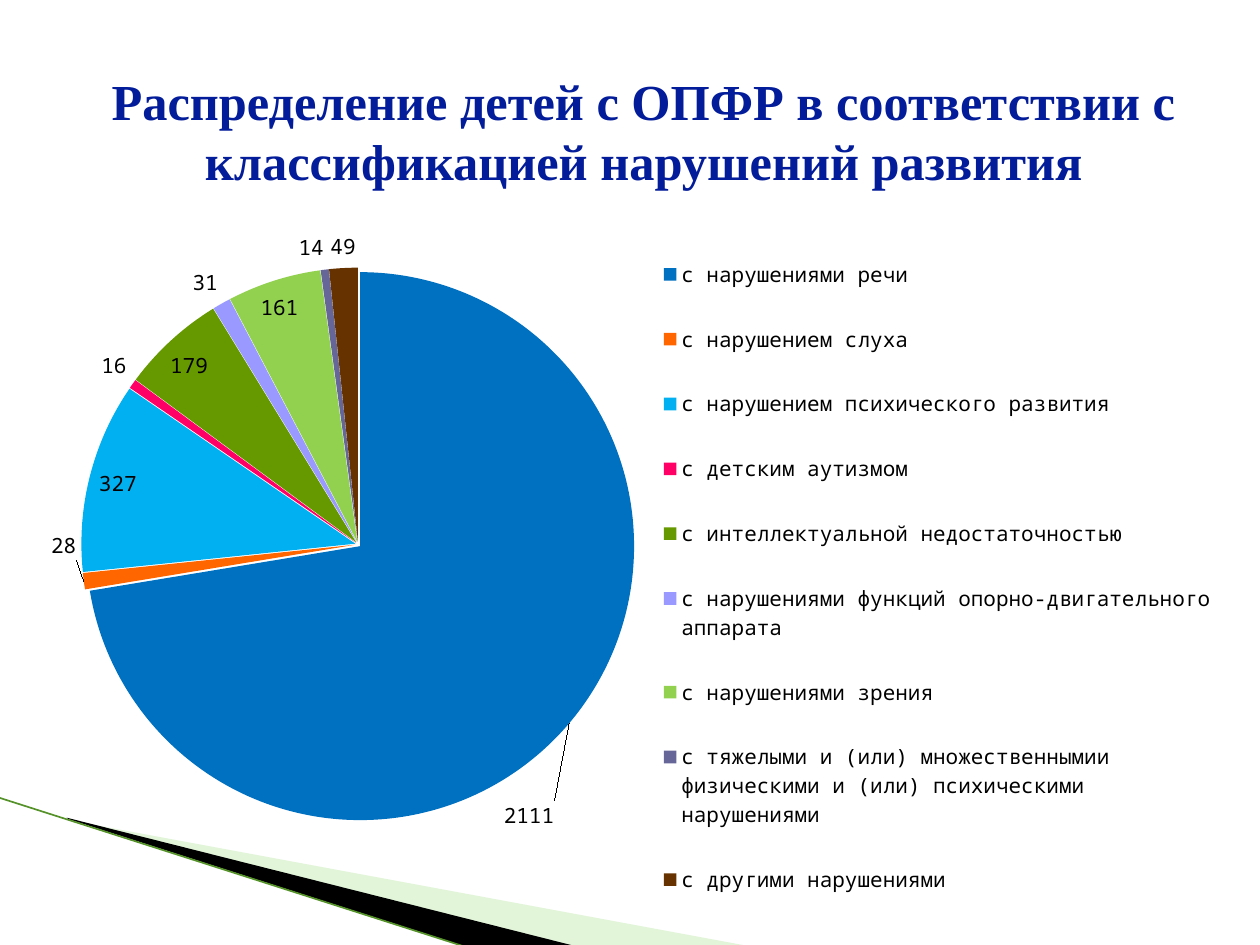
from dataclasses import dataclass

from lxml import etree
from pptx import Presentation
from pptx.chart.data import CategoryChartData
from pptx.dml.color import RGBColor
from pptx.enum.chart import XL_CHART_TYPE, XL_LABEL_POSITION, XL_LEGEND_POSITION
from pptx.enum.shapes import MSO_CONNECTOR
from pptx.enum.text import MSO_ANCHOR, MSO_AUTO_SIZE, PP_ALIGN
from pptx.oxml import parse_xml
from pptx.oxml.ns import nsdecls, qn
from pptx.util import Inches, Pt

PIE = XL_CHART_TYPE.PIE
BEST_FIT = XL_LABEL_POSITION.BEST_FIT
LEGEND_RIGHT = XL_LEGEND_POSITION.RIGHT
STRAIGHT = MSO_CONNECTOR.STRAIGHT
MIDDLE = MSO_ANCHOR.MIDDLE
CENTER = PP_ALIGN.CENTER
TITLE_ONLY = 5


@dataclass(frozen=True)
class Theme:
    title_font: str = "Times New Roman"
    chart_font: str = "Noto Sans Mono"
    title_size: float = 28.8
    chart_size: float = 12
    title: str = "031C99"
    text: str = "000000"
    pale_wedge: str = "B8E7A1"
    dark_wedge: str = "000000"
    edge: str = "55922A"


THEME = Theme()
TITLE = "Распределение детей с ОПФР в соответствии с классификацией нарушений развития"

# Category, number of children, slice colour
SLICES = [
    ("с нарушениями речи", 2111, "0070C0"),
    ("с нарушением слуха", 28, "FF6600"),
    ("с нарушением психического развития", 327, "00B0F0"),
    ("с детским аутизмом", 16, "FF0066"),
    ("с интеллектуальной недостаточностью", 179, "669900"),
    ("с нарушениями функций опорно-двигательного аппарата", 31, "9999FF"),
    ("с нарушениями зрения", 161, "92D050"),
    ("с тяжелыми и (или) множественнымии физическими и (или) психическими нарушениями",
     14, "666699"),
    ("с другими нарушениями", 49, "663300"),
]
# Slice index: shift of its label as a share of the chart
LABEL_SHIFTS = {0: (-0.06, 0.1), 1: (0, -0.07)}


def rgb(value):
    return RGBColor.from_string(value)


def format_font(font, name, size, color, bold=False):
    values = {"name": name, "size": Pt(size), "bold": bold}
    for attribute, value in values.items():
        setattr(font, attribute, value)
    font.color.rgb = rgb(color)


def add_wedge(page, points, color, opacity=100):
    corners = [(Inches(x), Inches(y)) for x, y in points]
    builder = page.shapes.build_freeform(*corners[0], scale=1.0)
    builder.add_line_segments(corners[1:], close=True)
    wedge = builder.convert_to_shape()
    wedge.shadow.inherit = False
    wedge.fill.solid()
    wedge.fill.fore_color.rgb = rgb(color)
    wedge.line.fill.background()
    if opacity < 100:
        fill_color = wedge._element.spPr.find(qn("a:solidFill"))[0]
        etree.SubElement(fill_color, qn("a:alpha"), val=str(opacity * 1000))


def add_edge(page, start, end):
    edge = page.shapes.add_connector(
        STRAIGHT, *(Inches(length) for length in (*start, *end)))
    edge.line.color.rgb = rgb(THEME.edge)
    edge.line.width = Pt(0.95)
    etree.SubElement(edge._element.spPr, qn("a:effectLst"))


def add_title(page):
    title = page.shapes.title
    page.shapes._spTree.append(title._element)
    box = {"left": 0.25, "top": 0.6, "width": 9.72, "height": 0.87}
    for attribute, value in box.items():
        setattr(title, attribute, Inches(value))
    frame = title.text_frame
    frame.word_wrap = True
    frame.auto_size = MSO_AUTO_SIZE.NONE
    frame.vertical_anchor = MIDDLE
    para = frame.paragraphs[0]
    para.alignment = CENTER
    span = para.add_run()
    span.text = TITLE
    format_font(span.font, THEME.title_font, THEME.title_size, THEME.title, True)


def make_layout(**values):
    """Return a chart layout element with the given manual settings."""
    settings = "".join(f'<c:{tag} val="{value}"/>' for tag, value in values.items())
    return parse_xml(f'<c:layout {nsdecls("c")}><c:manualLayout>{settings}'
                     '</c:manualLayout></c:layout>')


def set_layout(parent, layout, after=None):
    for old in parent.findall(qn("c:layout")):
        parent.remove(old)
    if after is None:
        parent.insert(0, layout)
    else:
        parent.find(qn(after)).addnext(layout)


def format_legend(chart):
    chart.has_legend = True
    legend = chart.legend
    legend.position = LEGEND_RIGHT
    legend.include_in_layout = False
    format_font(legend.font, THEME.chart_font, THEME.chart_size, THEME.text)
    set_layout(legend._element, make_layout(
        xMode="edge", yMode="edge", x=0.52, y=0.01, w=0.48, h=0.97), "c:legendPos")


def format_labels(plot):
    plot.has_data_labels = True
    labels = plot.data_labels
    labels.show_value = True
    labels.position = BEST_FIT
    format_font(labels.font, THEME.chart_font, THEME.chart_size, THEME.text)


def format_slices(series):
    explosion = parse_xml(f'<c:explosion {nsdecls("c")} val="1"/>')
    series.format.line.fill.background()
    series._element.find(qn("c:spPr")).addnext(explosion)
    for index, (_, _, color) in enumerate(SLICES):
        fill = series.points[index].format.fill
        fill.solid()
        fill.fore_color.rgb = rgb(color)
    for index, (x, y) in LABEL_SHIFTS.items():
        label = series.points[index].data_label
        format_font(label.font, THEME.chart_font, THEME.chart_size, THEME.text)
        label.position = BEST_FIT
        element = series._element.find(qn("c:dLbls")).findall(qn("c:dLbl"))[-1]
        set_layout(element, make_layout(x=x, y=y), "c:idx")
    series.data_labels.show_value = True
    series.data_labels.position = BEST_FIT


def add_pie(page):
    data = CategoryChartData()
    data.categories = [name for name, _, _ in SLICES]
    data.add_series("Series 1", [count for _, count, _ in SLICES])
    chart = page.shapes.add_chart(
        PIE, Inches(0.31), Inches(1.72), Inches(9.38), Inches(5.78), data).chart
    chart.has_title = False
    format_font(chart.font, THEME.chart_font, THEME.chart_size, THEME.text)
    plot = chart.plots[0]
    plot.vary_by_categories = True
    format_labels(plot)
    format_slices(plot.series[0])
    format_legend(chart)
    set_layout(chart._chartSpace.chart.plotArea, make_layout(
        layoutTarget="inner", xMode="edge", yMode="edge", x=0.02, y=0.07, w=0.5, h=0.76))


def main():
    deck = Presentation()
    deck.slide_width, deck.slide_height = Inches(10), Inches(7.5)
    page = deck.slides.add_slide(deck.slide_layouts[TITLE_ONLY])
    add_wedge(page, [(0.55, 6.51), (5.95, 7.51), (4.56, 7.51), (0.55, 6.5)],
              THEME.pale_wedge, opacity=40)
    add_wedge(page, [(0.53, 6.49), (4.57, 7.51), (3.72, 7.52), (0.54, 6.5)],
              THEME.dark_wedge)
    add_edge(page, (-0.01, 6.33), (3.71, 7.52))
    add_title(page)
    add_pie(page)
    deck.save("out.pptx")


if __name__ == "__main__":
    main()
